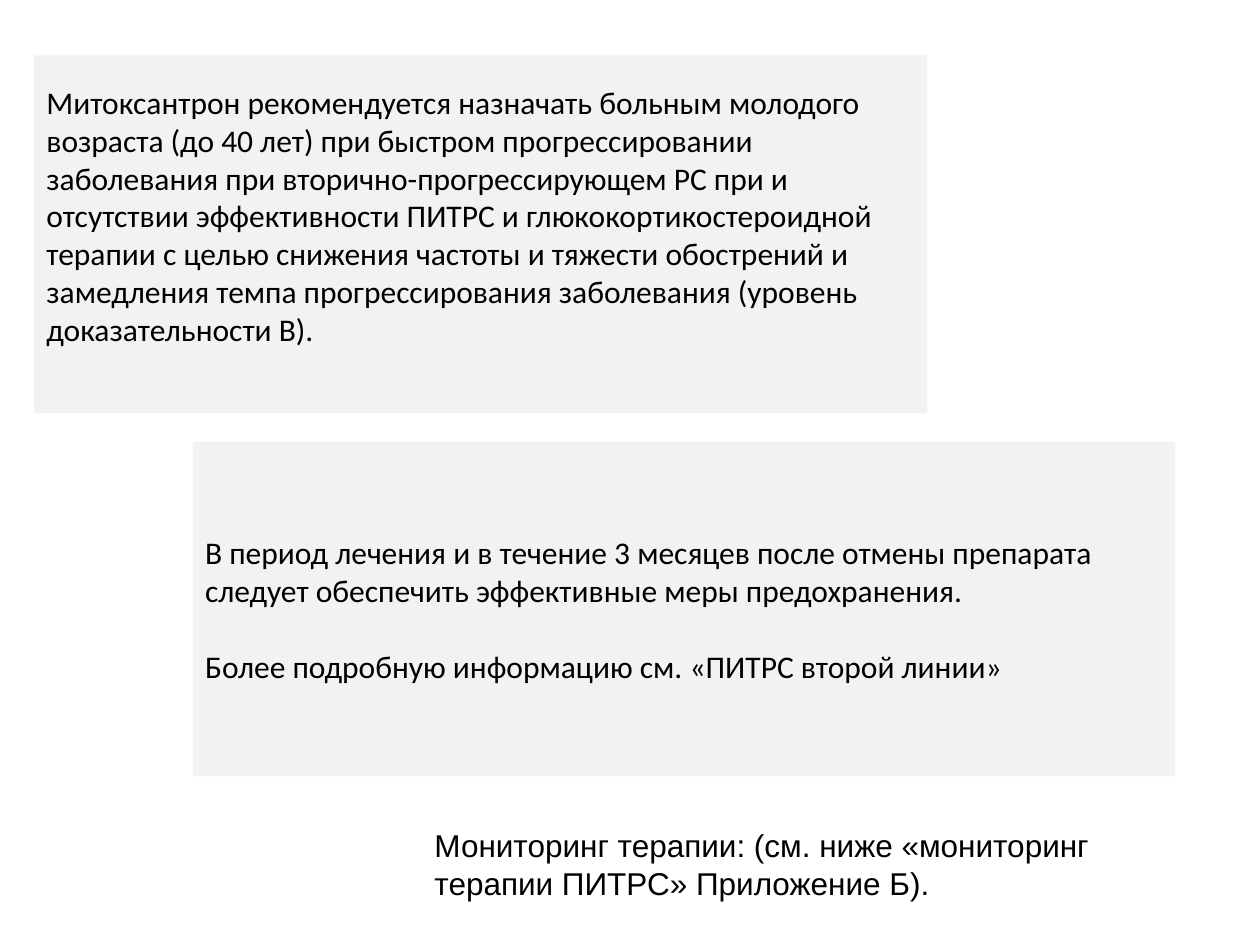
import dataclasses

import pptx
import pptx.dml.color
import pptx.enum.shapes
import pptx.enum.text
import pptx.util
from pptx.util import Inches


@dataclasses.dataclass(frozen=True)
class Theme:
    panel: str = "F2F2F2"
    text: str = "000000"
    panel_font: str = "Calibri"
    note_font: str = "Arial"
    size: int = 18
    line_height: int = 22


class SlideBuilder:
    def __init__(self, slide, theme):
        self.slide = slide
        self.theme = theme

    def fill_text(self, text_frame, paragraphs, font_name):
        """Fill a frame; paragraphs are set one line apart."""
        text_frame.word_wrap = True
        text_frame.text = "\n".join(paragraphs)
        for index, paragraph in enumerate(text_frame.paragraphs):
            paragraph.alignment = pptx.enum.text.PP_ALIGN.LEFT
            if index:
                paragraph.space_before = pptx.util.Pt(self.theme.line_height)
            for run in paragraph.runs:
                run.font.name = font_name
                run.font.size = pptx.util.Pt(self.theme.size)
                run.font.color.rgb = pptx.dml.color.RGBColor.from_string(self.theme.text)

    def panel(self, left, top, width, height, paragraphs, bottom_margin=0.05):
        shape = self.slide.shapes.add_shape(
            pptx.enum.shapes.MSO_SHAPE.RECTANGLE,
            Inches(left), Inches(top), Inches(width), Inches(height))
        shape.shadow.inherit = False
        shape.fill.solid()
        shape.fill.fore_color.rgb = pptx.dml.color.RGBColor.from_string(self.theme.panel)
        shape.line.fill.background()
        shape.text_frame.vertical_anchor = pptx.enum.text.MSO_ANCHOR.MIDDLE
        shape.text_frame.margin_bottom = Inches(bottom_margin)
        self.fill_text(shape.text_frame, paragraphs, self.theme.panel_font)

    def note(self, left, top, width, height, text):
        shape = self.slide.shapes.add_textbox(
            Inches(left), Inches(top), Inches(width), Inches(height))
        self.fill_text(shape.text_frame, [text], self.theme.note_font)
        shape.text_frame.auto_size = pptx.enum.text.MSO_AUTO_SIZE.SHAPE_TO_FIT_TEXT


def main():
    presentation = pptx.Presentation()
    presentation.slide_width = Inches(10)
    presentation.slide_height = Inches(7.5)
    slide = presentation.slides.add_slide(presentation.slide_layouts[6])
    builder = SlideBuilder(slide, Theme())

    # Indication, set a little above the middle of its panel
    builder.panel(0.27, 0.44, 7.09, 2.84, [
        "Митоксантрон рекомендуется назначать больным молодого возраста "
        "(до 40 лет) при быстром прогрессировании заболевания при "
        "вторично-прогрессирующем РС при и отсутствии эффективности ПИТРС и "
        "глюкокортикостероидной терапии с целью снижения частоты и тяжести "
        "обострений и замедления темпа прогрессирования заболевания "
        "(уровень доказательности В).",
    ], bottom_margin=0.35)

    # Precautions
    builder.panel(1.53, 3.51, 7.8, 2.65, [
        "В период лечения и в течение 3 месяцев после отмены препарата "
        "следует обеспечить эффективные меры предохранения.",
        "Более подробную информацию см. «ПИТРС второй линии»",
    ])

    # Monitoring reference
    builder.note(3.35, 6.51, 6.07, 0.71,
                 "Мониторинг терапии: (см. ниже «мониторинг терапии ПИТРС» "
                 "Приложение Б).")

    presentation.save("out.pptx")


if __name__ == "__main__":
    main()
